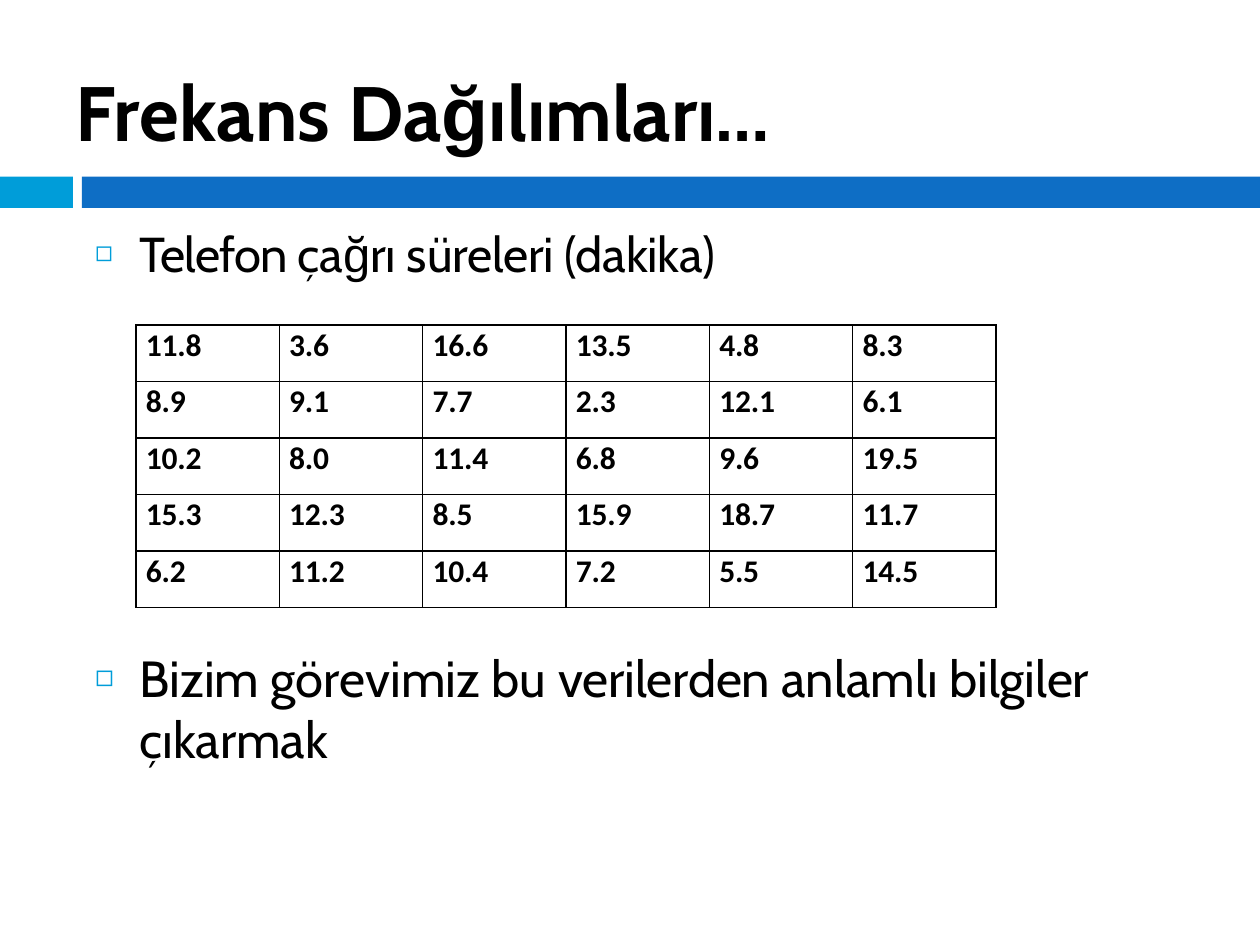
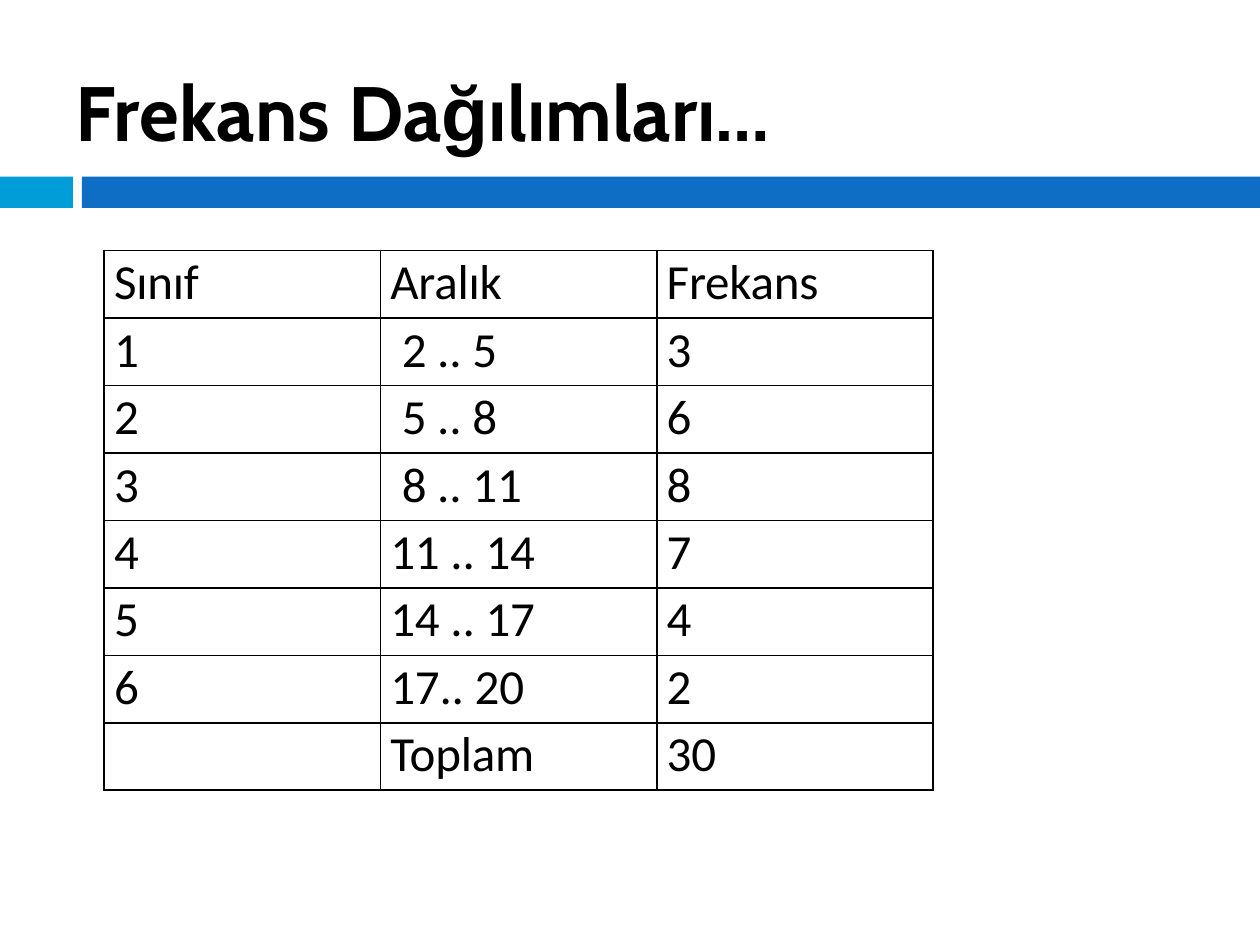
import dataclasses
import typing

import lxml.etree
import pptx
import pptx.dml.color
import pptx.enum.shapes
import pptx.enum.text
import pptx.oxml.ns
import pptx.slide
import pptx.text.text
import pptx.util

Cm = pptx.util.Cm
Pt = pptx.util.Pt
qn = pptx.oxml.ns.qn

INK = "000000"
CYAN = "009DD9"
BLUE = "0E6EC5"
HEADING_FONT = "Cabin"
TABLE_FONT = "Calibri"


class Box(typing.NamedTuple):
    left: float
    top: float
    width: float
    height: float


class Band(typing.NamedTuple):
    box: Box
    fill: str


class Piece(typing.NamedTuple):
    text: str
    tracking: int = 0
    font: str = HEADING_FONT


@dataclasses.dataclass
class TextStyle:
    size: float
    bold: bool = False
    space_before: float = 1
    left_indent: float = 0
    first_indent: float = 0
    bullet_percent: int = 0


@dataclasses.dataclass
class Grid:
    left: float
    top: float
    column_width: float
    row_height: float
    top_margin: float
    style: TextStyle
    rows: list[list[str]]


BANDS = [
    Band(Box(0, 3.56, 1.47, 0.63), CYAN),
    Band(Box(1.65, 3.56, 23.75, 0.63), BLUE),
]
TITLE_BOX = Box(1.5, 1.27, 14.4, 1.93)
TITLE_STYLE = TextStyle(44, bold=True, space_before=1.1, left_indent=0.03)
TITLE = [
    Piece("Frekans ", 10),
    Piece("Da"),
    Piece("ğ", font="Arial"),
    Piece("ılımları…"),
]

DURATIONS_BOX = Box(1.9, 4.47, 12.7, 1.24)
DURATIONS_STYLE = TextStyle(28, False, 0.9, 0.91, -0.89, 59)
DURATIONS = [
    Piece("Telefon ", -50),
    Piece("ça", -10),
    Piece("ğ", -10, "Arial"),
    Piece("rı süreleri (dakika)", -10),
]

TASK_BOX = Box(1.9, 13, 23.34, 1.3)
TASK_STYLE = TextStyle(29, False, 1, 0.91, -0.89, 60)
TASK = [
    Piece("Bizim görevimiz bu "),
    Piece("verilerden ", -10),
    Piece("anlamlı "),
    Piece("bilgiler ", -10),
    Piece("çıkarmak"),
]

CALL_TIMES = Grid(2.74, 6.55, 2.89, 1.14, 0.03, TextStyle(18, True, 0.7, 0.2), [
    ["11.8", "3.6", "16.6", "13.5", "4.8", "8.3"],
    ["8.9", "9.1", "7.7", "2.3", "12.1", "6.1"],
    ["10.2", "8.0", "11.4", "6.8", "9.6", "19.5"],
    ["15.3", "12.3", "8.5", "15.9", "18.7", "11.7"],
    ["6.2", "11.2", "10.4", "7.2", "5.5", "14.5"],
])
FREQUENCIES = Grid(2.1, 5.05, 5.57, 1.36, 0.05, TextStyle(28, False, 1.1, 0.2), [
    ["Sınıf", "Aralık", "Frekans"],
    ["1", "2 .. 5", "3"],
    ["2", "5 .. 8", "6"],
    ["3", "8 .. 11", "8"],
    ["4", "11 .. 14", "7"],
    ["5", "14 .. 17", "4"],
    ["6", "17.. 20", "2"],
    ["", "Toplam", "30"],
])
SINGLE_DIGIT_INDENT = 0.43


def colour(value: str) -> pptx.dml.color.RGBColor:
    return pptx.dml.color.RGBColor.from_string(value)


def apply(target: typing.Any, values: dict[str, typing.Any]) -> None:
    for name, value in values.items():
        setattr(target, name, value)


def margins(top: float) -> dict[str, typing.Any]:
    return {"margin_left": 0, "margin_right": 0, "margin_bottom": 0, "margin_top": Cm(top)}


def add_element(parent: typing.Any, tag: str, **attributes: str) -> typing.Any:
    return lxml.etree.SubElement(parent, qn(tag), attributes)


def write(line: pptx.text.text._Paragraph, pieces: list[Piece], style: TextStyle) -> None:
    apply(line, {
        "alignment": pptx.enum.text.PP_ALIGN.LEFT,
        "space_before": Pt(style.space_before),
    })
    properties = line._p.get_or_add_pPr()
    properties.set("marL", str(Cm(style.left_indent)))
    properties.set("indent", str(Cm(style.first_indent)))
    if style.bullet_percent:
        add_element(add_element(properties, "a:buClr"), "a:srgbClr", val=CYAN)
        add_element(properties, "a:buSzPct", val=str(style.bullet_percent * 1000))
        add_element(properties, "a:buChar", char="◻")
    for piece in pieces:
        run = line.add_run()
        run.text = piece.text
        apply(run.font, {"name": piece.font, "size": Pt(style.size), "bold": style.bold})
        run.font.color.rgb = colour(INK)
        run._r.get_or_add_rPr().set("spc", str(piece.tracking))


def fill_placeholder(holder: typing.Any, box: Box, pieces: list[Piece], style: TextStyle) -> None:
    apply(holder, {side: Cm(length) for side, length in box._asdict().items()})
    apply(holder.text_frame, margins(0.03) | {
        "word_wrap": True,
        "vertical_anchor": pptx.enum.text.MSO_ANCHOR.TOP,
        "auto_size": pptx.enum.text.MSO_AUTO_SIZE.SHAPE_TO_FIT_TEXT,
    })
    write(holder.text_frame.paragraphs[0], pieces, style)


def add_bands(slide: pptx.slide.Slide) -> None:
    for band in BANDS:
        bar = slide.shapes.add_shape(
            pptx.enum.shapes.MSO_SHAPE.RECTANGLE, *map(Cm, band.box))
        bar.shadow.inherit = False
        bar.fill.solid()
        bar.fill.fore_color.rgb = colour(band.fill)
        bar.line.fill.background()


def add_borders(cell: typing.Any) -> None:
    properties = cell._tc.get_or_add_tcPr()
    for side in "LRTB":
        border = add_element(properties, f"a:ln{side}", w=str(Pt(1)))
        add_element(add_element(border, "a:solidFill"), "a:srgbClr", val=INK)


def cell_style(text: str, style: TextStyle) -> TextStyle:
    lower, dots, _ = text.partition("..")
    if dots and len(lower.strip()) == 1:
        return dataclasses.replace(style, left_indent=SINGLE_DIGIT_INDENT)
    return style


def add_grid(slide: pptx.slide.Slide, grid: Grid) -> None:
    row_count, column_count = len(grid.rows), len(grid.rows[0])
    table = slide.shapes.add_table(
        row_count, column_count, Cm(grid.left), Cm(grid.top),
        Cm(grid.column_width * column_count), Cm(grid.row_height * row_count)).table
    apply(table, {"first_row": False, "horz_banding": False})
    for row, texts in zip(table.rows, grid.rows):
        row.height = Cm(grid.row_height)
        for cell, text in zip(row.cells, texts):
            apply(cell, margins(grid.top_margin))
            add_borders(cell)
            cell.fill.background()
            if text:
                write(cell.text_frame.paragraphs[0], [Piece(text, -10, TABLE_FONT)],
                      cell_style(text, grid.style))


def start_slide(deck: typing.Any, layout: str) -> pptx.slide.Slide:
    slide = deck.slides.add_slide(deck.slide_layouts.get_by_name(layout))
    add_bands(slide)
    fill_placeholder(slide.shapes.title, TITLE_BOX, TITLE, TITLE_STYLE)
    return slide


def main() -> None:
    deck = pptx.Presentation()
    apply(deck, {"slide_width": Cm(25.4), "slide_height": Cm(19.05)})

    calls = start_slide(deck, "Two Content")
    fill_placeholder(calls.placeholders[1], DURATIONS_BOX, DURATIONS, DURATIONS_STYLE)
    fill_placeholder(calls.placeholders[2], TASK_BOX, TASK, TASK_STYLE)
    add_grid(calls, CALL_TIMES)

    classes = start_slide(deck, "Title Only")
    add_grid(classes, FREQUENCIES)

    deck.save("out.pptx")


if __name__ == "__main__":
    main()
